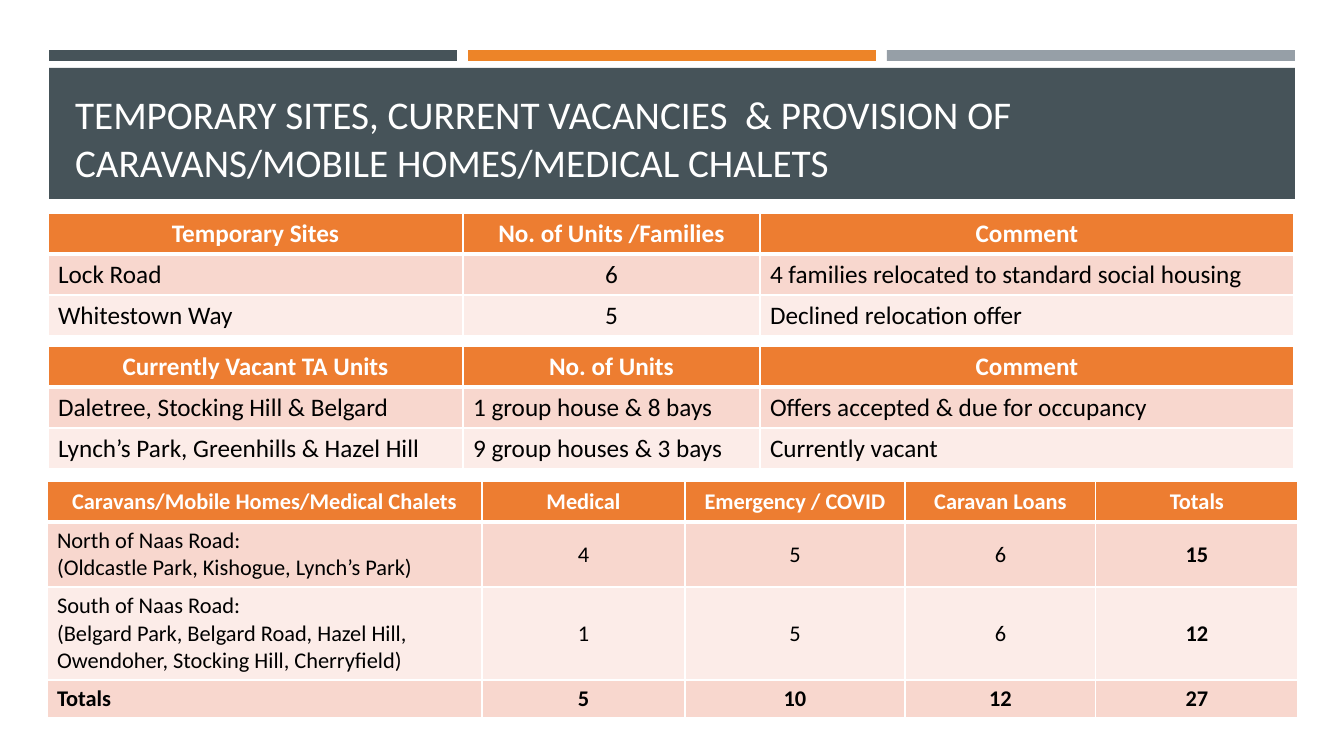
from dataclasses import dataclass

from lxml import etree
from pptx import Presentation
from pptx import util as u
from pptx.dml.color import RGBColor
from pptx.enum import shapes, text
from pptx.oxml.ns import qn

# Content
TITLE = ("TEMPORARY SITES, CURRENT VACANCIES  & PROVISION OF "
         "CARAVANS/MOBILE HOMES/MEDICAL CHALETS")
TEMPORARY_SITES = [
    ("Temporary Sites", "No. of Units /Families", "Comment"),
    ("Lock Road", "6", "4 families relocated to standard social housing"),
    ("Whitestown Way", "5", "Declined relocation offer"),
]
VACANT_UNITS = [
    ("Currently Vacant TA Units", "No. of Units", "Comment"),
    ("Daletree, Stocking Hill & Belgard", "1 group house & 8 bays",
     "Offers accepted & due for occupancy"),
    ("Lynch’s Park, Greenhills & Hazel Hill", "9 group houses & 3 bays",
     "Currently vacant"),
]
CARAVANS = [
    ("Caravans/Mobile Homes/Medical Chalets", "Medical", "Emergency / COVID",
     "Caravan Loans", "Totals"),
    ("North of Naas Road:\n(Oldcastle Park, Kishogue, Lynch’s Park)",
     "4", "5", "6", "15"),
    ("South of Naas Road:\n(Belgard Park, Belgard Road, Hazel Hill, "
     "Owendoher, Stocking Hill, Cherryfield)", "1", "5", "6", "12"),
    ("Totals", "5", "10", "12", "27"),
]


@dataclass(frozen=True)
class Theme:
    font: str = "Calibri"
    slate: str = "465359"
    orange: str = "ED8428"
    grey: str = "969FA7"
    header: str = "ED7D31"
    bands: tuple = ("F8D7CE", "FCECE8")
    white: str = "FFFFFF"
    black: str = "000000"
    title_size: int = 28
    table_size: int = 18
    small_size: int = 16


THEME = Theme()

# Layout in px
PX = u.Inches(1) / 100.8
SLIDE_SIZE = (1344, 756)
BAR_LEFT, BAR_TOP, BAR_WIDTH, BAR_HEIGHT, BAR_GAP = 49, 50, 408, 11, 11
BAND = (49, 68, 1246, 131)
TITLE_BOX = (65, 78, 1215, 112)
SITE_COLUMNS = (415, 297, 534)
SITE_ROWS = (41, 41, 41)

# rows, left, top, column widths, row heights, column alignment, size, totals
TABLES = [
    (TEMPORARY_SITES, 48, 213, SITE_COLUMNS, SITE_ROWS, "lcl",
     THEME.table_size, False),
    (VACANT_UNITS, 48, 346, SITE_COLUMNS, SITE_ROWS, "lll",
     THEME.table_size, False),
    (CARAVANS, 47, 481, (435, 203, 220, 191, 202), (41, 65, 93, 37), "lcccc",
     THEME.small_size, True),
]
ALIGN = {"l": text.PP_ALIGN.LEFT, "c": text.PP_ALIGN.CENTER}


def px(*lengths):
    return [u.Emu(round(length * PX)) for length in lengths]


def add_run(paragraph, words, size, color, bold=False):
    run = paragraph.add_run()
    run.text = words
    run.font.name = THEME.font
    run.font.size = u.Pt(size)
    run.font.bold = bold
    run.font.color.rgb = RGBColor.from_string(color)


def add_block(slide, box, color):
    shape = slide.shapes.add_shape(shapes.MSO_SHAPE.RECTANGLE, *px(*box))
    shape.shadow.inherit = False
    shape.fill.solid()
    shape.fill.fore_color.rgb = RGBColor.from_string(color)
    shape.line.fill.background()


def set_borders(cell, top, bottom):
    properties = cell._tc.get_or_add_tcPr()
    for side, points in (("L", 1), ("R", 1), ("T", top), ("B", bottom)):
        line = etree.SubElement(properties, qn(f"a:ln{side}"), w=str(u.Pt(points)))
        fill = etree.SubElement(line, qn("a:solidFill"))
        etree.SubElement(fill, qn("a:srgbClr"), val=THEME.white)


def add_table(slide, rows, left, top, widths, heights, aligns, size, totals):
    box = px(left, top, sum(widths), sum(heights))
    table = slide.shapes.add_table(len(rows), len(widths), *box).table
    table.first_row = table.horz_banding = False
    for column, width in zip(table.columns, px(*widths)):
        column.width = width
    for row, height in zip(table.rows, px(*heights)):
        row.height = height

    for r, row in enumerate(rows):
        header = r == 0
        for c, words in enumerate(row):
            cell = table.cell(r, c)
            set_borders(cell, 3 if r == 1 else 1, 3 if header else 1)
            cell.fill.solid()
            cell.fill.fore_color.rgb = RGBColor.from_string(
                THEME.header if header else THEME.bands[(r - 1) % 2])
            middle = header or totals
            cell.vertical_anchor = (text.MSO_ANCHOR.MIDDLE if middle
                                    else text.MSO_ANCHOR.TOP)
            in_total = totals and (r == len(rows) - 1 or c == len(row) - 1)
            frame = cell.text_frame
            for i, line in enumerate(words.split("\n")):
                paragraph = frame.add_paragraph() if i else frame.paragraphs[0]
                paragraph.alignment = ALIGN["c" if header else aligns[c]]
                add_run(paragraph, line, size,
                        THEME.white if header else THEME.black,
                        header or in_total)


def add_title(slide):
    title = slide.shapes.title
    title.left, title.top, title.width, title.height = px(*TITLE_BOX)
    frame = title.text_frame
    frame.word_wrap = True
    frame.auto_size = text.MSO_AUTO_SIZE.NONE
    frame.vertical_anchor = text.MSO_ANCHOR.BOTTOM
    frame.paragraphs[0].alignment = ALIGN["l"]
    add_run(frame.paragraphs[0], TITLE, THEME.title_size, THEME.white)
    # Bring the title in front of its band
    title.element.getparent().append(title.element)


def main():
    presentation = Presentation()
    presentation.slide_width, presentation.slide_height = px(*SLIDE_SIZE)
    slide = presentation.slides.add_slide(presentation.slide_layouts[5])

    # Accent bars and title band
    for i, color in enumerate((THEME.slate, THEME.orange, THEME.grey)):
        left = BAR_LEFT + i * (BAR_WIDTH + BAR_GAP)
        add_block(slide, (left, BAR_TOP, BAR_WIDTH, BAR_HEIGHT), color)
    add_block(slide, BAND, THEME.slate)
    add_title(slide)

    # Tables
    for table in TABLES:
        add_table(slide, *table)
    presentation.save("out.pptx")


if __name__ == "__main__":
    main()
